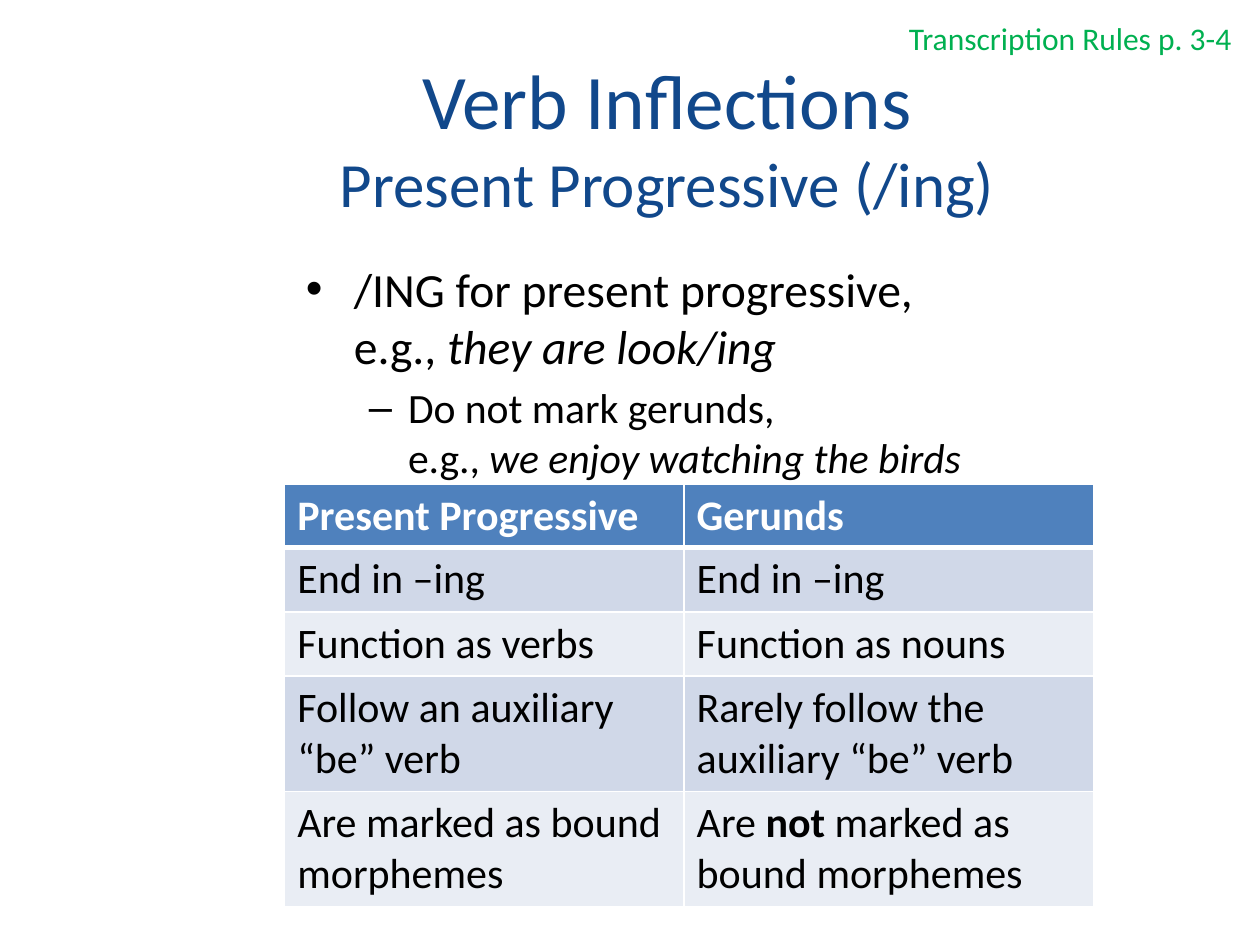
from lxml import etree
from pptx import Presentation
from pptx.dml.color import RGBColor
from pptx.enum.text import MSO_ANCHOR, PP_ALIGN
from pptx.oxml.ns import qn
from pptx.util import Inches, Pt

CENTER = PP_ALIGN.CENTER
MIDDLE = MSO_ANCHOR.MIDDLE


def write(paragraph, text, size, color="000000", bold=False, italic=False):
    for index, line in enumerate(text.split("\n")):
        if index:
            paragraph.add_line_break()
        run = paragraph.add_run()
        run.text = line
        run.font.name = "Calibri"
        run.font.size = Pt(size)
        run.font.bold = bold
        run.font.italic = italic
        run.font.color.rgb = RGBColor.from_string(color)


def add_border(cell, side, width):
    line = etree.SubElement(cell._tc.get_or_add_tcPr(), qn(f"a:ln{side}"), w=str(Pt(width)))
    fill = etree.SubElement(line, qn("a:solidFill"))
    etree.SubElement(fill, qn("a:srgbClr"), val="FFFFFF")


prs = Presentation()
prs.slide_width, prs.slide_height = Inches(10), Inches(7.5)
slide = prs.slides.add_slide(prs.slide_layouts[5])

title = slide.shapes.title
title.left, title.top = Inches(1.42), Inches(0.38)
title.width, title.height = Inches(7.75), Inches(1.4)
title.text_frame.vertical_anchor = MIDDLE
heading = title.text_frame.paragraphs[0]
heading.alignment = CENTER
write(heading, "Verb Inflections\n", 44.1, "11488B")
write(heading, "Present Progressive (/ing)", 36, "11488B")

ROWS = [
    ("Present Progressive", "Gerunds"),
    ("End in –ing", "End in –ing"),
    ("Function as verbs", "Function as nouns"),
    ("Follow an auxiliary “be” verb", "Rarely follow the auxiliary “be” verb"),
    ("Are marked as bound morphemes", "Are *not* marked as bound morphemes"),
]
ROW_HEIGHTS = [0.5, 0.51, 0.51, 0.91, 0.91]
COLUMN_WIDTHS = [3.17, 3.25]
comparison = slide.shapes.add_table(
    len(ROWS), 2, Inches(2.26), Inches(3.84), Inches(sum(COLUMN_WIDTHS)), Inches(sum(ROW_HEIGHTS))
).table
for column, width in zip(comparison.columns, COLUMN_WIDTHS):
    column.width = Inches(width)
for r, (entries, height) in enumerate(zip(ROWS, ROW_HEIGHTS)):
    comparison.rows[r].height = Inches(height)
    header = r == 0
    row_fill = "4F81BD" if header else ("E9EDF4", "D0D8E8")[r % 2]
    for c, entry in enumerate(entries):
        cell = comparison.cell(r, c)
        for side in "LRTB":
            under_header = (r, side) in ((0, "B"), (1, "T"))
            add_border(cell, side, 3 if under_header else 1)
        cell.fill.solid()
        cell.fill.fore_color.rgb = RGBColor.from_string(row_fill)
        for index, part in enumerate(entry.split("*")):
            write(cell.text_frame.paragraphs[0], part, 24,
                  "FFFFFF" if header else "000000", bold=header or index == 1)

reference = slide.shapes.add_textbox(Inches(7.08), Inches(0.1), Inches(2.83), Inches(0.4))
reference.text_frame.word_wrap = True
reference_line = reference.text_frame.paragraphs[0]
reference_line.alignment = CENTER
write(reference_line, "Transcription Rules p. 3-4", 18, "00B050")

RULES = [
    ("•", 0.38, 0.38, 27.2, 0, "/ING for present progressive,\ne.g., ", "they are look/ing"),
    ("–", 0.81, 0.31, 23.8, 4.8, "Do not mark gerunds, \ne.g., ", "we enjoy watching the birds"),
]
rules = slide.shapes.add_textbox(Inches(2.33), Inches(2.01), Inches(6.08), Inches(1.65)).text_frame
rules.word_wrap = True
for level, (bullet, margin, hanging, size, before, rule, example) in enumerate(RULES):
    paragraph = rules.add_paragraph() if level else rules.paragraphs[0]
    paragraph.level = level
    properties = paragraph._p.get_or_add_pPr()
    properties.set("marL", str(Inches(margin)))
    properties.set("indent", str(-Inches(hanging)))
    etree.SubElement(properties, qn("a:buFont"), typeface="Arial")
    etree.SubElement(properties, qn("a:buChar"), char=bullet)
    paragraph.space_before = Pt(before)
    write(paragraph, rule, size)
    write(paragraph, example, size, italic=True)

prs.save("out.pptx")
